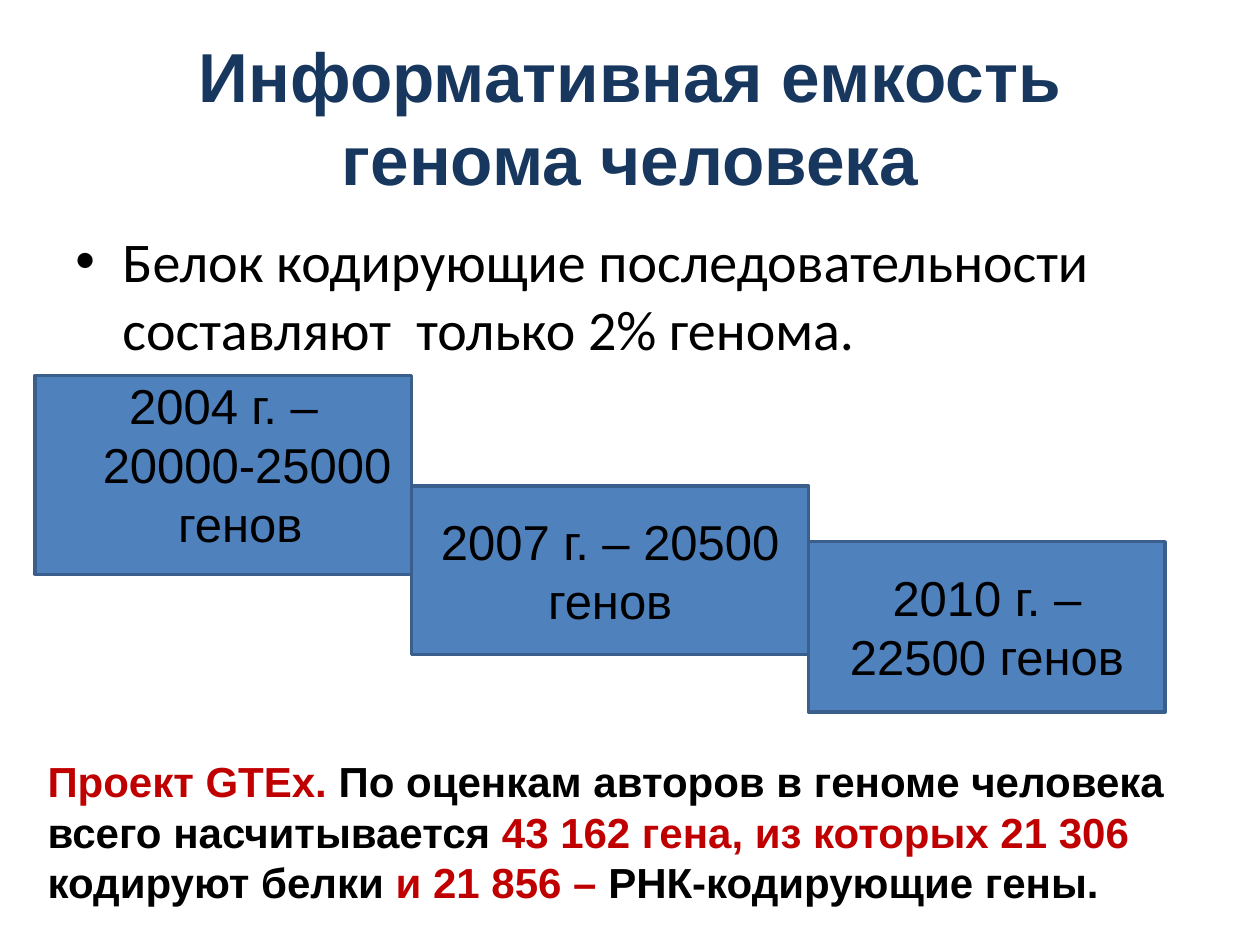
from lxml import etree
from pptx import Presentation
from pptx import util as u
from pptx.dml.color import RGBColor
from pptx.enum import shapes, text
from pptx.oxml.ns import qn

COLOURS = {
    "title": "17375E",
    "ink": "000000",
    "accent": "C00000",
    "fill": "4F81BD",
    "line": "3A5F8C",
}
INDENT = u.Cm(0.95)


class GenomeSlide:
    """Holds the style and the current slide."""

    def __init__(self, deck):
        self.page = deck.slides.add_slide(deck.slide_layouts[6])

    def colour(self, name):
        return RGBColor.from_string(COLOURS[name])

    def add_spans(self, para, spans, size, font="Arial", bold=False):
        for words, colour in spans:
            span = para.add_run()
            span.text = words
            span.font.name = font
            span.font.size = u.Pt(size)
            span.font.bold = bold
            span.font.color.rgb = self.colour(colour)

    def bullet(self, para, tag, **settings):
        props = para._p.get_or_add_pPr()
        props.set("marL", str(INDENT))
        props.set("indent", str(-INDENT))
        if tag == "a:buChar":
            etree.SubElement(props, qn("a:buFont"), typeface="Arial")
        etree.SubElement(props, qn(tag), **settings)

    def text_box(self, left, top, width, height, spans, size, **style):
        box = self.page.shapes.add_textbox(
            u.Cm(left), u.Cm(top), u.Cm(width), u.Cm(height))
        box.text_frame.word_wrap = True
        para = box.text_frame.paragraphs[0]
        self.add_spans(para, spans, size, **style)
        return box.text_frame, para

    def year_box(self, left, top, width, height, words):
        box = self.page.shapes.add_shape(
            shapes.MSO_SHAPE.RECTANGLE,
            u.Cm(left), u.Cm(top), u.Cm(width), u.Cm(height))
        box.shadow.inherit = False
        box.fill.solid()
        box.fill.fore_color.rgb = self.colour("fill")
        box.line.color.rgb = self.colour("line")
        box.line.width = u.Pt(2)
        frame = box.text_frame
        frame.word_wrap = True
        frame.vertical_anchor = text.MSO_ANCHOR.MIDDLE
        para = frame.paragraphs[0]
        para.alignment = text.PP_ALIGN.CENTER
        self.add_spans(para, [(words, "ink")], 28)
        return frame, para


def main():
    deck = Presentation()
    deck.slide_width, deck.slide_height = u.Cm(25.4), u.Cm(19.05)
    slide = GenomeSlide(deck)

    # Title
    frame, para = slide.text_box(
        1.27, 0.76, 22.86, 3.18,
        [("Информативная емкость генома человека", "title")], 39.6, bold=True)
    frame.vertical_anchor = text.MSO_ANCHOR.MIDDLE
    para.alignment = text.PP_ALIGN.CENTER

    # Bulleted statement
    frame, para = slide.text_box(
        1.27, 4.45, 22.86, 12.57,
        [("Белок кодирующие последовательности составляют  только 2% генома.",
          "ink")], 32, font="Calibri")
    para.space_before = u.Pt(6.4)
    slide.bullet(para, "a:buChar", char="•")

    # Gene counts by year; the first year is a list number
    frame, para = slide.year_box(
        0.71, 7.57, 7.59, 4.01, " г. – 20000-25000 генов ")
    frame.vertical_anchor = text.MSO_ANCHOR.TOP
    frame.margin_top = 0
    slide.bullet(para, "a:buAutoNum", type="arabicPlain", startAt="2004")
    slide.year_box(8.3, 9.8, 8, 3.4, "2007 г. – 20500 генов")
    slide.year_box(16.3, 10.92, 7.19, 3.43, "2010 г. – 22500 генов")

    # Project estimate
    slide.text_box(0.71, 15.11, 24.41, 3.33, [
        ("Проект GTEx. ", "accent"),
        ("По оценкам авторов в геноме человека всего насчитывается", "ink"),
        (" 43 162 гена, из которых 21 306 ", "accent"),
        ("кодируют белки ", "ink"),
        ("и 21 856 – ", "accent"),
        ("РНК-кодирующие гены.", "ink"),
    ], 24, bold=True)

    deck.save("out.pptx")


if __name__ == "__main__":
    main()
